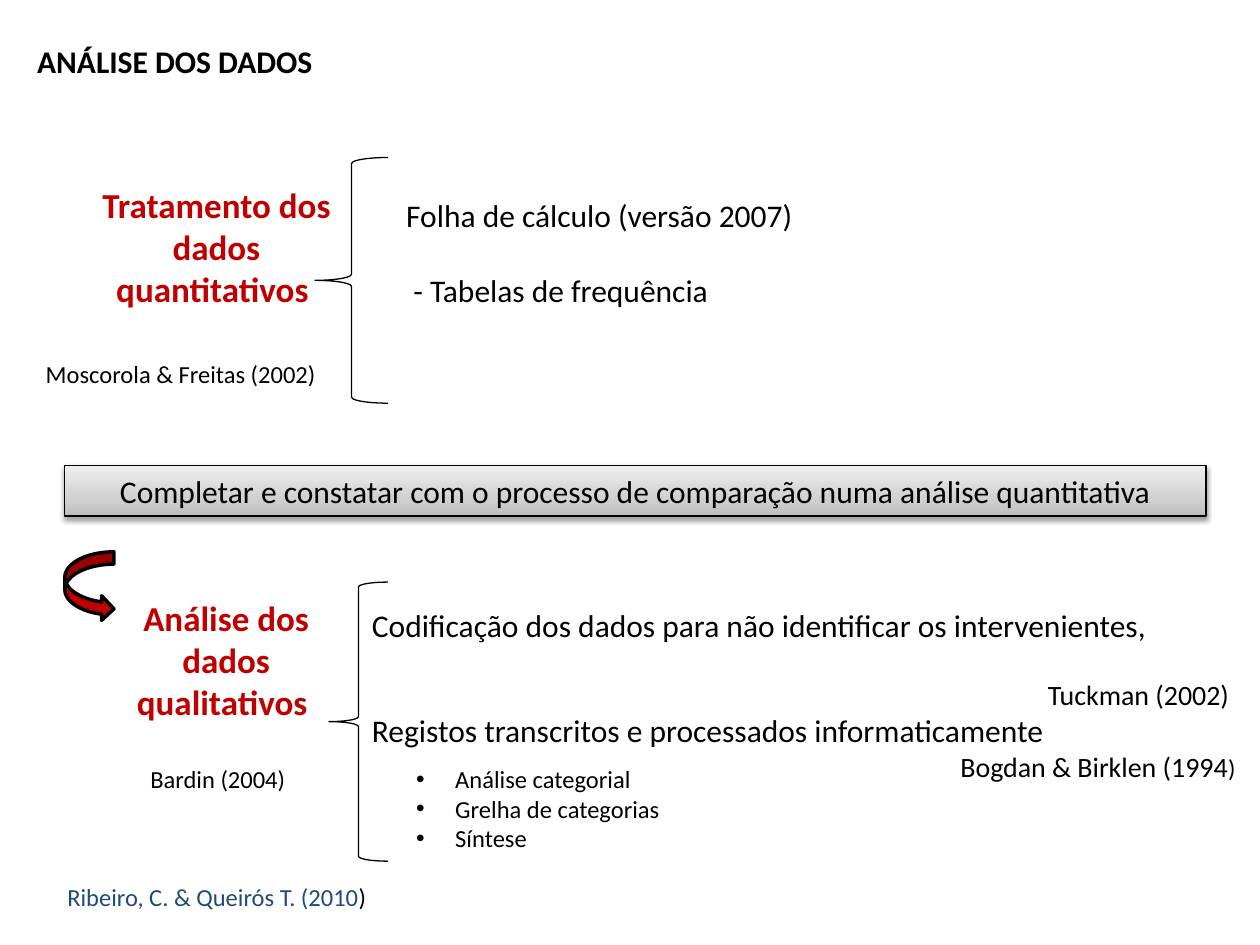
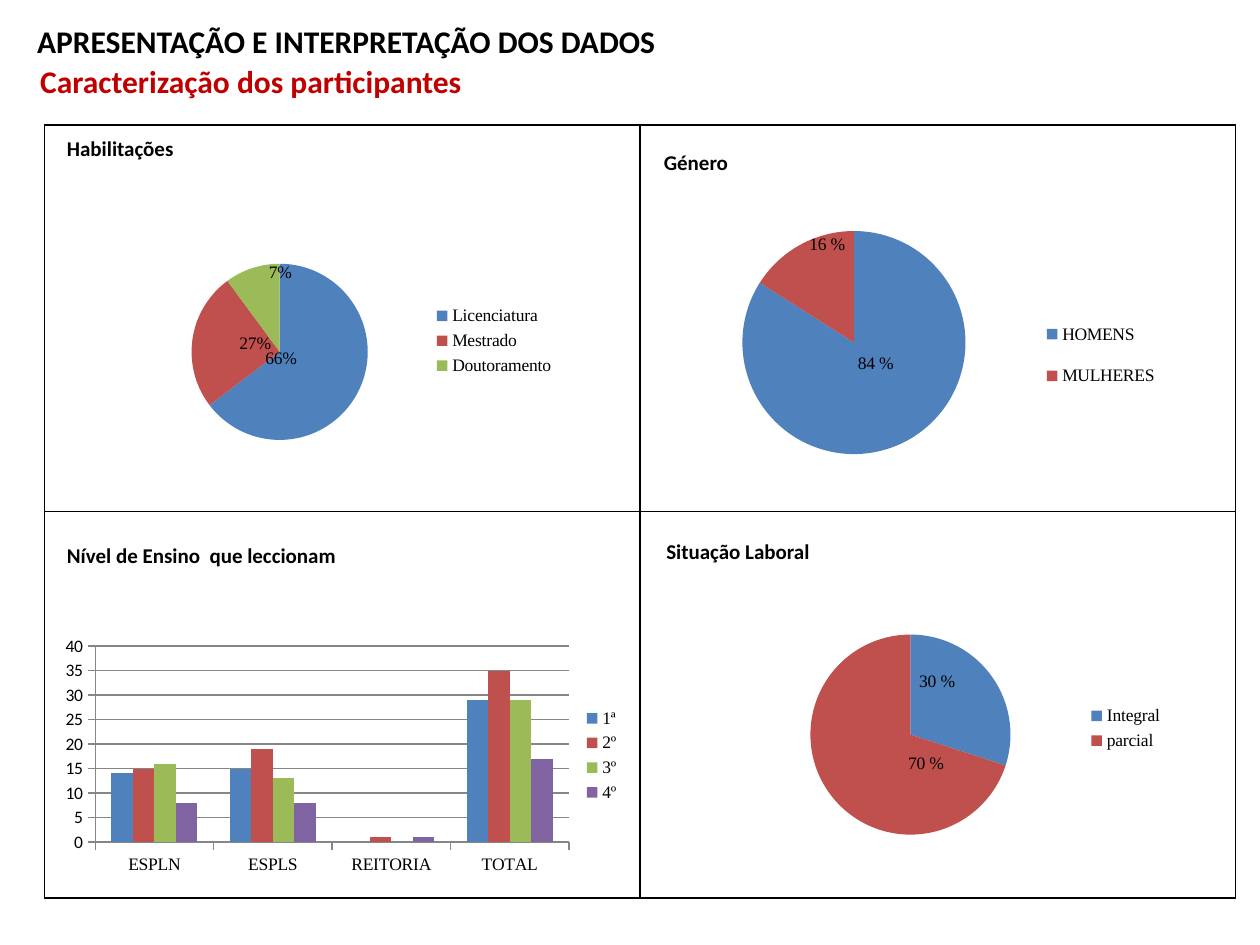
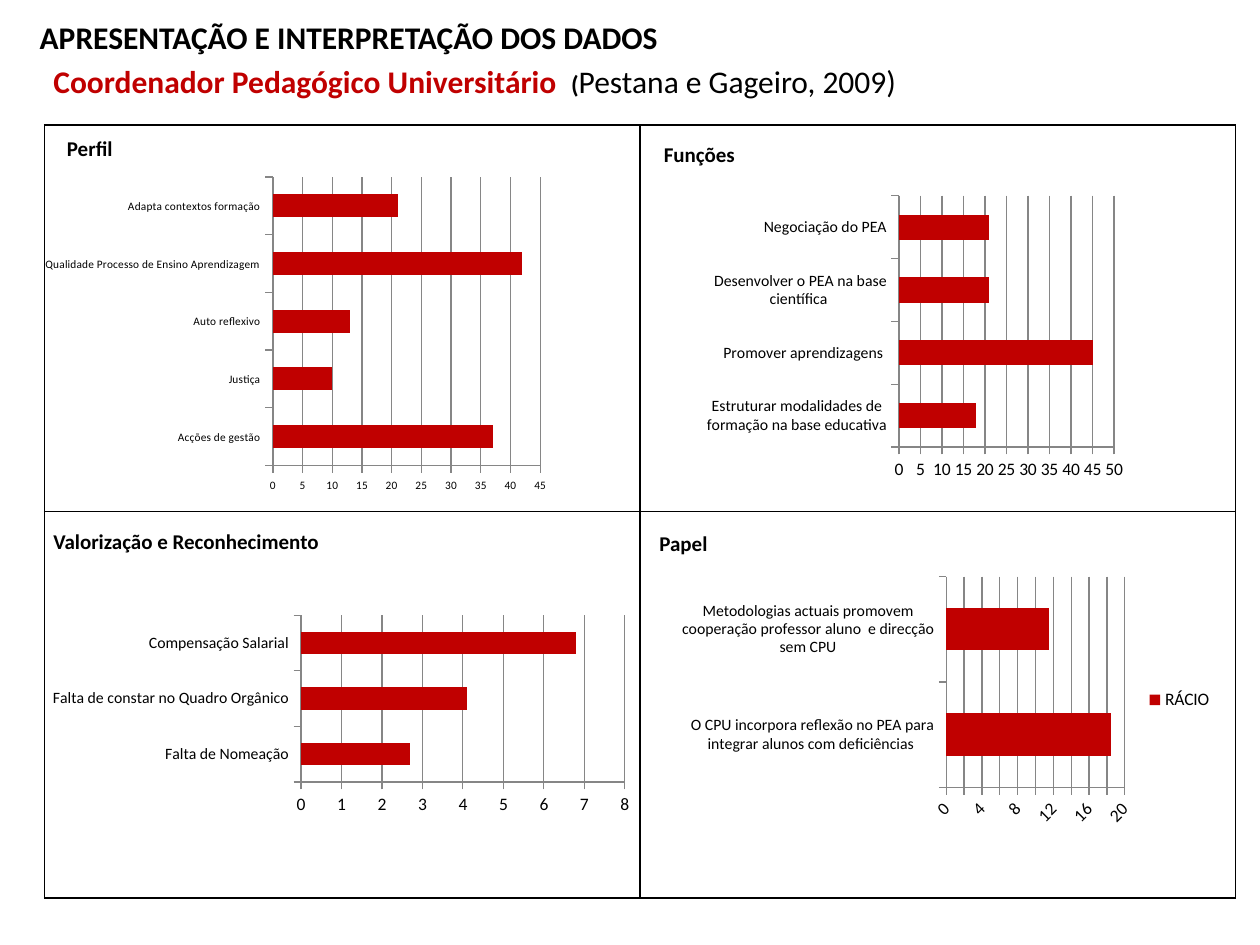
from dataclasses import dataclass

from lxml import etree
from pptx import Presentation
from pptx.chart.data import CategoryChartData
from pptx.dml.color import RGBColor
from pptx.enum.chart import XL_CHART_TYPE as CT, XL_LABEL_POSITION as LP
from pptx.enum.chart import XL_LEGEND_POSITION as LEG, XL_TICK_MARK as TICK
from pptx.enum.shapes import MSO_SHAPE as SHAPE
from pptx.enum.text import MSO_ANCHOR as ANCHOR, PP_ALIGN as ALIGN
from pptx.oxml import parse_xml
from pptx.oxml.ns import nsdecls, qn
from pptx.util import Inches, Pt


@dataclass(frozen=True)
class Theme:
    black: str = "000000"
    white: str = "FFFFFF"
    red: str = "C00000"
    navy: str = "1F497D"
    grid: str = "868686"
    series: tuple = ("4F81BD", "C0504D", "9BBB59", "8064A2")
    font: str = "Calibri"
    serif: str = "Times New Roman"
    title: int = 18
    topic: int = 20
    source: int = 16
    note: int = 14
    label: int = 12
    chart: int = 10
    category: int = 9
    tiny: float = 6.5


T = Theme()
WIDTH, HEIGHT = Inches(10), Inches(7.5)
COL, ROW = WIDTH / 100, HEIGHT / 75    # the page grid: 100 columns, 75 rows
FRAME = (3.54, 9.92, 94.5, 61.35)


def place(x, y, w, h):
    return int(x * COL), int(y * ROW), int(w * COL), int(h * ROW)


def rgb(color):
    return RGBColor.from_string(color)


# ---- Text ----
def set_font(font, size=T.title, color=T.black, bold=False, name=T.font):
    font.size, font.bold, font.name = Pt(size), bold, name
    font.color.rgb = rgb(color)


def write(tf, text, align=ALIGN.LEFT, before=0, **fmt):
    """Add a paragraph; text is a string or a list of (string, format) runs."""
    p = tf.paragraphs[-1]
    if p.runs:
        p = tf.add_paragraph()
    p.alignment, p.space_before = align, Pt(before)
    for words, own in [(text, {})] if isinstance(text, str) else text:
        r = p.add_run()
        r.text = words
        set_font(r.font, **{**fmt, **own})
    return p


def add_text(s, box, text=None, **fmt):
    tb = s.shapes.add_textbox(*place(*box))
    tb.text_frame.word_wrap = True
    if text:
        write(tb.text_frame, text, **fmt)
    return tb


def add_bullets(s, box, items, **fmt):
    tf = add_text(s, box).text_frame
    for item in items:
        pPr = write(tf, item, **fmt)._p.get_or_add_pPr()
        pPr.set("marL", str(Inches(0.31)))
        pPr.set("indent", str(-Inches(0.31)))
        etree.SubElement(pPr, qn("a:buFont")).set("typeface", "Arial")
        etree.SubElement(pPr, qn("a:buChar")).set("char", "•")


def new_slide(prs, title, x, y):
    s = prs.slides.add_slide(prs.slide_layouts[5])
    sp = s.shapes.title
    sp.left, sp.top, sp.width, sp.height = place(x, y, 76.4, 4)
    sp.text_frame.vertical_anchor = ANCHOR.TOP
    sp.text_frame.word_wrap = True
    write(sp.text_frame, title, bold=True)
    return s


# ---- Shapes and table ----
def add_figure(s, kind, box, fill=None, line=0.75):
    sp = s.shapes.add_shape(kind, *place(*box))
    sp.shadow.inherit = False
    sp.line.color.rgb, sp.line.width = rgb(T.black), Pt(line)
    if fill:
        sp.fill.solid()
        sp.fill.fore_color.rgb = rgb(fill)
    else:
        sp.fill.background()
    return sp


def add_band(s, box, text):
    sp = add_figure(s, SHAPE.RECTANGLE, box)
    stops = "".join(f'<a:gs pos="{pos}"><a:srgbClr val="{color}"/></a:gs>' for pos, color in
                    ((0, "BDBDBD"), (35000, "D1D1D1"), (100000, "EEEEEE")))
    spPr = sp._element.spPr
    spPr.replace(spPr.find(qn("a:noFill")), parse_xml(
        f'<a:gradFill {nsdecls("a")}><a:gsLst>{stops}</a:gsLst>'
        '<a:lin ang="16200000" scaled="0"/></a:gradFill>'))
    spPr.find(qn("a:effectLst")).append(parse_xml(
        f'<a:outerShdw {nsdecls("a")} blurRad="{Pt(3.1)}" dist="{Pt(1.6)}" dir="5400000" '
        f'rotWithShape="0"><a:srgbClr val="{T.black}"><a:alpha val="38000"/></a:srgbClr>'
        '</a:outerShdw>'))
    sp.text_frame.word_wrap = True
    write(sp.text_frame, text, align=ALIGN.CENTER)


def add_quadrants(s):
    table = s.shapes.add_table(2, 2, *place(*FRAME)).table
    table.first_row = table.horz_banding = False
    for cell in table.iter_cells():
        tcPr = cell._tc.get_or_add_tcPr()
        for side in "LRTB":
            tcPr.append(parse_xml(
                f'<a:ln{side} {nsdecls("a")} w="{Pt(1)}"><a:solidFill>'
                f'<a:srgbClr val="{T.black}"/></a:solidFill></a:ln{side}>'))
        cell.fill.background()


# ---- Charts ----
def layout_xml(x, y, w=None, h=None, inner=False):
    """A manual layout in shares of the chart."""
    parts = '<c:layoutTarget val="inner"/>' if inner else ""
    if w:
        parts += '<c:xMode val="edge"/><c:yMode val="edge"/>'
    parts += "".join(f'<c:{k} val="{v}"/>' for k, v in zip("xywh", (x, y, w, h)) if v is not None)
    return parse_xml(f'<c:layout {nsdecls("c")}><c:manualLayout>{parts}'
                     '</c:manualLayout></c:layout>')


def add_chart(s, kind, box, cats, series, plot, legend_font=None, legend_box=None):
    data = CategoryChartData()
    data.categories = cats
    for name, values in series:
        data.add_series(name, values)
    chart = s.shapes.add_chart(kind, *place(*box), data).chart
    set_font(chart.font, size=T.chart)
    chart.has_title = False
    area = chart._chartSpace.chart.plotArea
    for old in area.findall(qn("c:layout")):
        area.remove(old)
    area.insert(0, layout_xml(*plot, inner=True))
    chart.has_legend = legend_font is not None
    if legend_font:
        legend = chart.legend
        legend.position, legend.include_in_layout = LEG.RIGHT, False
        set_font(legend.font, size=T.chart, name=legend_font)
        if legend_box:
            legend._element.find(qn("c:legendPos")).addnext(layout_xml(*legend_box))
    return chart


def add_pie(s, box, slices, plot, legend_box=None):
    """slices: (category, value, label, label shift) for each sector."""
    cats, values, labels, shifts = zip(*slices)
    chart = add_chart(s, CT.PIE, box, cats, [("Series 1", values)], plot, T.serif, legend_box)
    chart.plots[0].vary_by_categories = True
    for i, (label, shift) in enumerate(zip(labels, shifts)):
        point = chart.plots[0].series[0].points[i]
        point.format.fill.solid()
        point.format.fill.fore_color.rgb = rgb(T.series[i])
        write(point.data_label.text_frame, label, align=ALIGN.CENTER,
              size=T.chart, name=T.serif)
        point.data_label.position = LP.CENTER
        point.data_label._dLbl.find(qn("c:idx")).addnext(layout_xml(*shift))


def add_bars(s, kind, box, cats, series, plot, colors, top, step,
             cat_font, val_size=T.chart, legend_font=None, turn=None):
    chart = add_chart(s, kind, box, cats, series, plot, legend_font)
    bars = chart.plots[0]
    bars.gap_width, bars.vary_by_categories = 150, False
    for ser, color in zip(bars.series, colors):
        ser.format.fill.solid()
        ser.format.fill.fore_color.rgb = rgb(color)
    cat, val = chart.category_axis, chart.value_axis
    set_font(cat.tick_labels.font, **cat_font)
    set_font(val.tick_labels.font, size=val_size)
    val.minimum_scale, val.maximum_scale, val.major_unit = 0, top, step
    val.has_major_gridlines = True
    for axis in (cat, val):
        axis.major_tick_mark = TICK.OUTSIDE
    for line in (cat.format.line, val.format.line, val.major_gridlines.format.line):
        line.color.rgb, line.width = rgb(T.grid), Pt(0.75)
    if turn:
        val._element.find(qn("c:txPr")).find(qn("a:bodyPr")).set("rot", str(turn * 60000))


def add_ratio(s, box, rows, plot, top, step, size=T.category, name="Series 1", **kw):
    cats, values = zip(*rows)
    add_bars(s, CT.BAR_CLUSTERED, box, cats, [(name, values)], plot, [T.red], top, step,
             {"size": size}, **kw)


# ---- Slides ----
def analysis_slide(prs):
    s = new_slide(prs, "ANÁLISE DOS DADOS", 1.95, 2.85)
    topic = dict(size=T.topic, color=T.red, bold=True, align=ALIGN.CENTER)
    for brace in ((25, 12.5, 5.8, 19.5), (26.1, 46.2, 4.7, 22.15)):
        add_figure(s, SHAPE.LEFT_BRACE, brace)

    # Quantitative data
    add_text(s, (6.2, 14.1, 21.95, 14.5), "Tratamento dos dados quantitativos ", **topic)
    cite = add_text(s, (2.65, 28, 24, 3.4), "Moscorola & Freitas (2002)", size=T.note)
    cite.fill.solid()
    cite.fill.fore_color.rgb = rgb(T.white)
    tf = add_text(s, (31.25, 15.05, 64.5, 16.2), "Folha de cálculo (versão 2007)").text_frame
    write(tf, " - Tabelas de frequência", before=21.5)

    add_band(s, (5.12, 36.95, 90.6, 4),
             "Completar e constatar com o processo de comparação numa análise quantitativa")
    add_figure(s, SHAPE.CURVED_RIGHT_ARROW, (5.14, 43.8, 3.9, 5.5), T.red, 2)

    # Qualitative data
    add_text(s, (7, 46.85, 21.9, 14.5), "Análise dos dados qualitativos ", **topic)
    add_text(s, (10.95, 60.15, 14, 3.4), "Bardin (2004)", size=T.note)
    tf = add_text(s, (28.53, 47.6, 70.5, 15.1),
                  "Codificação dos dados para não identificar os intervenientes,").text_frame
    write(tf, "Tuckman (2002) ", align=ALIGN.RIGHT, before=19.5, size=T.source)
    write(tf, "Registos transcritos e processados informaticamente")
    write(tf, [("Bogdan & Birklen (1994", {}), (")", {"size": T.note})],
          align=ALIGN.RIGHT, size=T.source)
    add_bullets(s, (32.05, 60.15, 23.4, 8.1),
                ["Análise categorial", "Grelha de categorias", "Síntese"], size=T.note)
    add_text(s, (4.36, 69.5, 27.3, 3.4),
             [("Ribeiro, C. & Queirós T. (2010", {"color": T.navy}), (")", {})], size=T.note)


def results_slide(prs, x, y, subtitle, sub_x, labels):
    """The frame that both results slides share."""
    s = new_slide(prs, "APRESENTAÇÃO E INTERPRETAÇÃO DOS DADOS", x, y)
    add_text(s, (sub_x, 4.4, 100 - sub_x, 4), subtitle, color=T.red, bold=True)
    add_quadrants(s)
    for text, left, top in labels:
        add_text(s, (left, top, 40, 3), text, size=T.label, bold=True)
    return s


def participants_slide(prs):
    s = results_slide(prs, 1.95, 1.25, "Caracterização dos participantes", 2.2, [
        ("Habilitações", 4.33, 10.25), ("Género", 51.7, 11.4),
        ("Nível de Ensino  que leccionam", 4.33, 42.6), ("Situação Laboral", 51.9, 42.25)])
    add_pie(s, (6.7, 17, 37.8, 19.7), [
        ("Licenciatura", 64, "66%", (-0.08, -0.05)),
        ("Mestrado", 25, "27%", (0.04, -0.01)),
        ("Doutoramento", 10, "7%", (0.03, -0.15))],
        (0.08, 0.2, 0.66, 0.71), (0.73, 0.35, 0.26, 0.32))
    add_pie(s, (52.2, 14.4, 42.1, 24.6), [
        ("HOMENS", 84, "84 %", (-0.01, -0.09)),
        ("MULHERES", 16, "16 %", (0, -0.16))],
        (0.03, 0.16, 0.68, 0.72), (0.71, 0.39, 0.25, 0.34))
    add_pie(s, (56.35, 49.35, 37, 16.9), [
        ("Integral", 30, "30 %", (-0.03, -0.11)),
        ("parcial", 70, "70 %", (0.12, 0))], (0.04, 0.06, 0.78, 0.94))
    add_bars(s, CT.COLUMN_CLUSTERED, (4.35, 50.1, 45.85, 19.7),
             ["ESPLN", "ESPLS", "REITORIA", "TOTAL"],
             [("1ª", (14, 15, None, 29)), ("2º", (15, 19, 1, 35)),
              ("3º", (16, 13, None, 29)), ("4º", (8, 8, 1, 17))],
             (0.07, 0.06, 0.82, 0.79), T.series, 40, 5,
             {"size": T.chart, "name": T.serif}, legend_font=T.serif)


def coordinator_slide(prs):
    subtitle = [("Coordenador Pedagógico Universitário  ", {}),
                ("(", {"color": T.black, "size": T.note}),
                ("Pestana e Gageiro, 2009)", {"color": T.black, "bold": False})]
    s = results_slide(prs, 2.15, 0.95, subtitle, 3.25, [
        ("Perfil", 4.33, 10.25), ("Funções", 51.7, 10.75),
        ("Valorização e Reconhecimento", 3.25, 41.45), ("Papel", 51.35, 41.6)])
    add_ratio(s, (3.6, 12.25, 47.3, 30.1), [
        ("Acções de gestão", 37), ("Justiça", 10), ("Auto reflexivo", 13),
        ("Qualidade Processo de Ensino Aprendizagem", 42),
        ("Adapta contextos formação", 21)],
        (0.38, 0.06, 0.45, 0.76), 45, 5, size=T.tiny, val_size=T.tiny)
    add_ratio(s, (52.95, 13.95, 43.8, 26.6), [
        ("Estruturar modalidades de formação na base educativa", 18),
        ("Promover aprendizagens ", 45),
        ("Desenvolver o PEA na base científica ", 21),
        ("Negociação do PEA", 21)], (0.42, 0.06, 0.39, 0.75), 50, 5)
    add_ratio(s, (3.42, 48.5, 47.6, 16.35), [
        ("Falta de Nomeação", 2.7), ("Falta de constar no Quadro Orgânico", 4.1),
        ("Compensação Salarial", 6.8)], (0.43, 0.02, 0.54, 0.81), 8, 1)
    add_ratio(s, (52.95, 45.35, 44.3, 20.4), [
        ("O CPU incorpora reflexão no PEA para integrar alunos com deficiências ", 18.5),
        ("Metodologias actuais promovem cooperação professor aluno  e direcção sem CPU", 11.5)],
        (0.5, 0.02, 0.32, 0.82), 20, 2, name="RÁCIO", legend_font=T.font, turn=-45)


def main():
    prs = Presentation()
    prs.slide_width, prs.slide_height = WIDTH, HEIGHT
    analysis_slide(prs)
    participants_slide(prs)
    coordinator_slide(prs)
    prs.save("out.pptx")


if __name__ == "__main__":
    main()
